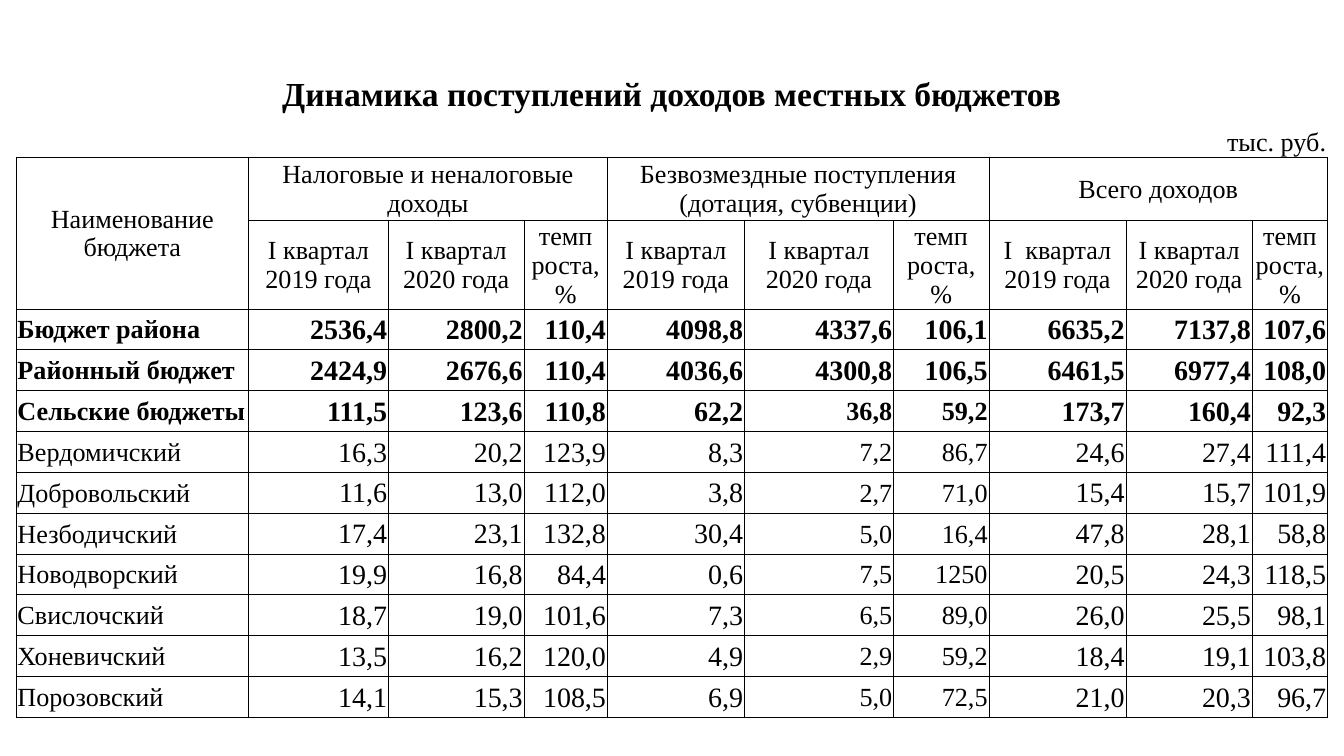
from dataclasses import dataclass

from lxml import etree
from pptx import Presentation
from pptx.dml.color import RGBColor
from pptx.enum.text import MSO_ANCHOR, PP_ALIGN
from pptx.oxml.ns import qn
from pptx.table import Table, _Cell
from pptx.util import Inches, Pt

LEFT, CENTER, RIGHT = PP_ALIGN.LEFT, PP_ALIGN.CENTER, PP_ALIGN.RIGHT
MIDDLE, BOTTOM = MSO_ANCHOR.MIDDLE, MSO_ANCHOR.BOTTOM
FONT = "Times New Roman"
BLACK = "000000"
BORDER_POINTS = 0.5
ALL_SIDES = ("lnL", "lnR", "lnT", "lnB")
BOTTOM_SIDE = ("lnB",)

SLIDE_WIDTH = 10
SLIDE_HEIGHT = SLIDE_WIDTH * 9 / 16
TABLE_LEFT, TABLE_TOP = 0.12, 0.53
COLUMN_WIDTHS = [1.73, 1.04, 0.74, 0.27, 0.62, 0.89, 0.13, 1.11, 0.71, 0.73, 0.29, 0.6, 0.34, 0.56]
HEADING_HEIGHTS = [0.32, 0.32, 0.47, 0.66]
BODY_HEIGHT = 3.04

TITLE_ROW, UNIT_ROW, GROUP_ROW, PERIOD_ROW, FIRST_BODY_ROW = range(5)
FIELD_STARTS = [0, 1, 2, 4, 5, 7, 8, 9, 11, 13]
FIELD_SPANS = [1, 1, 2, 1, 2, 1, 1, 2, 2, 1]
SMALL_FIELDS = (5, 6)
BOLD_ROWS = 3
FIRST_SMALL_ROW = 2

PERIODS = [
    "I квартал 2019 года", "I квартал\n2020 года", "темп\nроста, %",
    "I квартал 2019 года", "I квартал\n2020 года", "темп\nроста, %",
    "I  квартал\n2019 года", "I квартал\n2020 года", "темп\nроста, %",
]
BUDGETS = [
    ("Бюджет района", "2536,4 2800,2 110,4 4098,8 4337,6 106,1 6635,2 7137,8 107,6"),
    ("Районный бюджет", "2424,9 2676,6 110,4 4036,6 4300,8 106,5 6461,5 6977,4 108,0"),
    ("Сельские бюджеты", "111,5 123,6 110,8 62,2 36,8 59,2 173,7 160,4 92,3"),
    ("Вердомичский", "16,3 20,2 123,9 8,3 7,2 86,7 24,6 27,4 111,4"),
    ("Добровольский", "11,6 13,0 112,0 3,8 2,7 71,0 15,4 15,7 101,9"),
    ("Незбодичский", "17,4 23,1 132,8 30,4 5,0 16,4 47,8 28,1 58,8"),
    ("Новодворский", "19,9 16,8 84,4 0,6 7,5 1250 20,5 24,3 118,5"),
    ("Свислочский", "18,7 19,0 101,6 7,3 6,5 89,0 26,0 25,5 98,1"),
    ("Хоневичский", "13,5 16,2 120,0 4,9 2,9 59,2 18,4 19,1 103,8"),
    ("Порозовский", "14,1 15,3 108,5 6,9 5,0 72,5 21,0 20,3 96,7"),
]


@dataclass(frozen=True)
class Entry:
    """A table cell with its place on the grid and its text style."""

    row: int
    column: int
    text: str = ""
    columns: int = 1
    rows: int = 1
    size: int = 14
    bold: bool = False
    align: PP_ALIGN = CENTER
    anchor: MSO_ANCHOR = MIDDLE


def heading_entries() -> list[Entry]:
    """Return the title, unit and column heading cells."""
    entries = [
        Entry(TITLE_ROW, 0, "Динамика поступлений доходов местных бюджетов",
              columns=14, size=18, bold=True, anchor=BOTTOM),
        Entry(UNIT_ROW, 12, "тыс. руб.", columns=2, align=RIGHT, anchor=BOTTOM),
        Entry(GROUP_ROW, 0, "Наименование бюджета", rows=2),
        Entry(GROUP_ROW, 1, "Налоговые и неналоговые доходы", columns=4),
        Entry(GROUP_ROW, 5, "Безвозмездные поступления (дотация, субвенции)", columns=4),
        Entry(GROUP_ROW, 9, "Всего доходов", columns=5),
    ]
    blanks = [(0, 1), (1, 2), (3, 3), (6, 3), (9, 1), (10, 2)]
    entries += [Entry(UNIT_ROW, column, columns=span) for column, span in blanks]
    fields = zip(FIELD_STARTS[1:], FIELD_SPANS[1:], PERIODS)
    return entries + [Entry(PERIOD_ROW, start, text, span) for start, span, text in fields]


def body_entries() -> list[Entry]:
    """Return the name and number cells of every budget."""
    entries = []
    for index, (name, numbers) in enumerate(BUDGETS):
        texts = [name, *numbers.split()]
        for field, (start, span, text) in enumerate(zip(FIELD_STARTS, FIELD_SPANS, texts)):
            small = field == 0 or (field in SMALL_FIELDS and index >= FIRST_SMALL_ROW)
            entries.append(Entry(
                FIRST_BODY_ROW + index, start, text, span,
                size=14 if small else 15,
                bold=index < BOLD_ROWS,
                align=RIGHT if field else LEFT,
            ))
    return entries


def color(value: str) -> RGBColor:
    """Turn a hex string into a colour."""
    return RGBColor.from_string(value)


def draw_borders(cell: _Cell, sides: tuple[str, ...]) -> None:
    """Give the named sides a thin black line and the others none."""
    properties = cell._tc.get_or_add_tcPr()
    for side in ALL_SIDES:
        line = etree.SubElement(properties, qn(f"a:{side}"), w=str(Pt(BORDER_POINTS)))
        if side in sides:
            fill = etree.SubElement(line, qn("a:solidFill"))
            etree.SubElement(fill, qn("a:srgbClr"), val=BLACK)
        else:
            etree.SubElement(line, qn("a:noFill"))


def format_grid(table: Table) -> None:
    """Set the borders, fill and margins of every cell."""
    for row_index, row in enumerate(table.rows):
        sides = {TITLE_ROW: (), UNIT_ROW: BOTTOM_SIDE}.get(row_index, ALL_SIDES)
        for cell in row.cells:
            draw_borders(cell, sides)
            cell.fill.background()
            cell.margin_left = cell.margin_right = cell.margin_top = Inches(0.01)
            cell.margin_bottom = 0


def write_entry(table: Table, entry: Entry) -> None:
    """Merge the area of an entry and write its text."""
    cell = table.cell(entry.row, entry.column)
    if entry.rows > 1 or entry.columns > 1:
        last_row = entry.row + entry.rows - 1
        last_column = entry.column + entry.columns - 1
        cell.merge(table.cell(last_row, last_column))
    cell.text = entry.text
    cell.vertical_anchor = entry.anchor
    for paragraph in cell.text_frame.paragraphs:
        paragraph.alignment = entry.align
        paragraph.font.name = FONT
        paragraph.font.size = Pt(entry.size)
        paragraph.font.bold = entry.bold
        paragraph.font.color.rgb = color(BLACK)


def main() -> None:
    """Build the slide with the budget income table."""
    presentation = Presentation()
    presentation.slide_width = Inches(SLIDE_WIDTH)
    presentation.slide_height = Inches(SLIDE_HEIGHT)
    slide = presentation.slides.add_slide(presentation.slide_layouts[6])

    row_heights = HEADING_HEIGHTS + [BODY_HEIGHT / len(BUDGETS)] * len(BUDGETS)
    table = slide.shapes.add_table(
        len(row_heights), len(COLUMN_WIDTHS), Inches(TABLE_LEFT), Inches(TABLE_TOP),
        Inches(sum(COLUMN_WIDTHS)), Inches(sum(row_heights)),
    ).table
    table.first_row = table.horz_banding = False
    for column, width in zip(table.columns, COLUMN_WIDTHS):
        column.width = Inches(width)
    for row, height in zip(table.rows, row_heights):
        row.height = Inches(height)

    format_grid(table)
    for entry in heading_entries() + body_entries():
        write_entry(table, entry)
    presentation.save("out.pptx")


if __name__ == "__main__":
    main()
